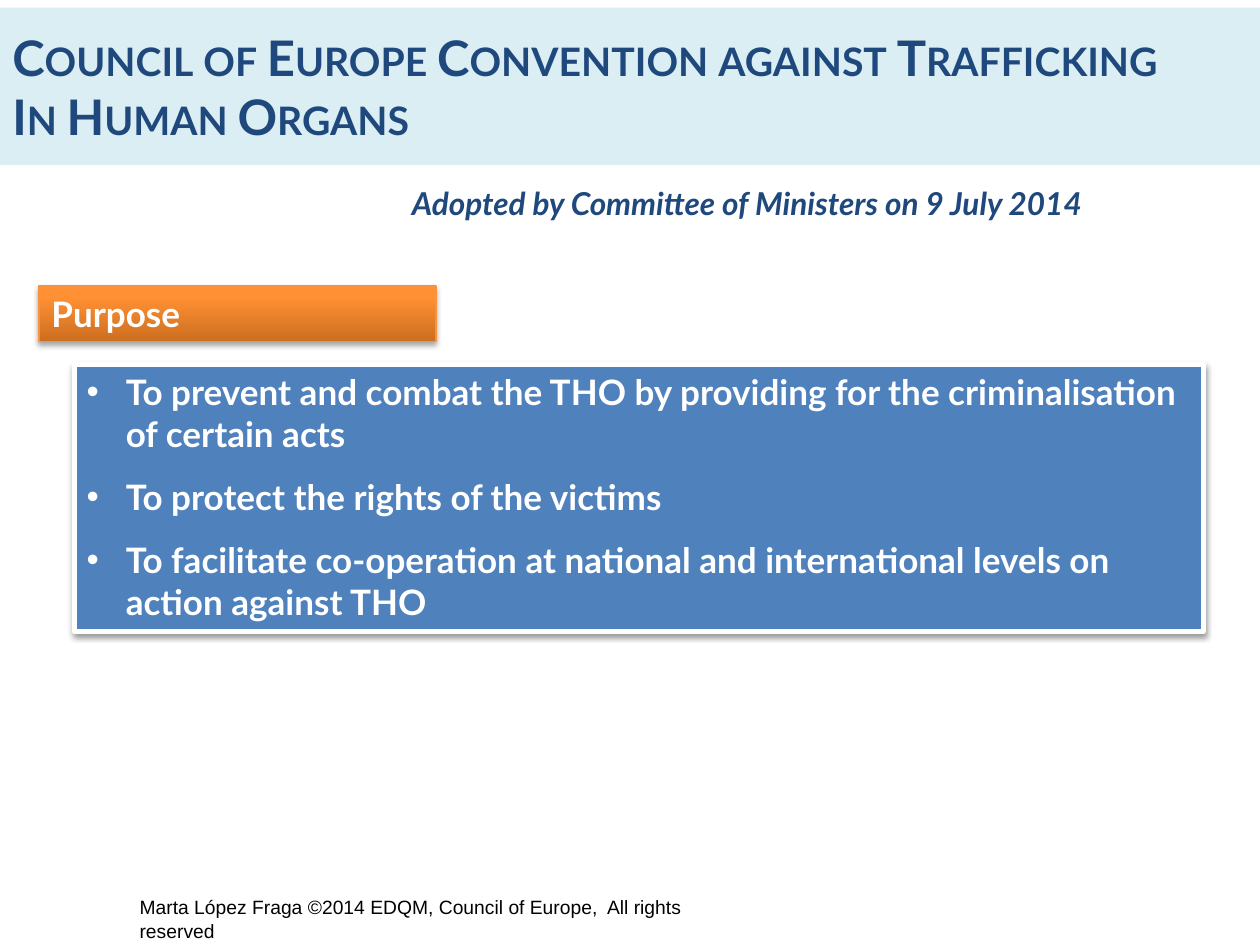
from copy import deepcopy

from lxml.etree import SubElement
from pptx import Presentation
from pptx.dml.color import RGBColor as Rgb
from pptx.enum.shapes import MSO_SHAPE as Shape
from pptx.enum.text import MSO_ANCHOR as Anchor, PP_ALIGN as Align
from pptx.oxml.ns import qn
from pptx.util import Inches, Pt

COLORS = {
    "band": "DBEEF4",
    "navy": "1F497D",
    "blue": "4F81BD",
    "white": "FFFFFF",
    "black": "000000",
    "orange_edge": "F69240",
}
ORANGE_STOPS = [(0, "CC6E20"), (0.8, "FF9034"), (1, "FF9136")]


def rgb(name):
    return Rgb.from_string(COLORS[name])


def write(shape, lines, size, color, font="Lato", bold=True, italic=False,
          small_caps=False, bullet=False, gap=0, anchor=Anchor.TOP):
    frame = shape.text_frame
    frame.word_wrap = True
    frame.vertical_anchor = anchor
    for index, line in enumerate(lines):
        paragraph = frame.add_paragraph() if index else frame.paragraphs[0]
        paragraph.alignment = Align.LEFT
        if index and gap:
            paragraph.space_before = Pt(gap)
        if bullet:
            props = paragraph._p.get_or_add_pPr()
            props.set("marL", str(Inches(0.31)))
            props.set("indent", str(-Inches(0.31)))
            SubElement(props, qn("a:buFont"), typeface="Arial")
            SubElement(props, qn("a:buChar"), char="•")
        run = paragraph.add_run()
        run.text = line
        run.font.name = font
        run.font.size = Pt(size)
        run.font.bold = bold
        run.font.italic = italic
        run.font.color.rgb = rgb(color)
        if small_caps:
            run.font._element.set("cap", "small")


class SlideBuilder:
    def __init__(self, slide):
        self.slide = slide

    def text(self, box, lines, **style):
        write(self.slide.shapes.add_textbox(*map(Inches, box)), lines, **style)

    def panel(self, box, lines, fill=None, stops=None, line=None,
              line_width=1, shadow=None, **style):
        """Filled rectangle; stops give a bottom-to-top gradient, shadow an opacity."""
        panel = self.slide.shapes.add_shape(Shape.RECTANGLE, *map(Inches, box))
        panel.shadow.inherit = False
        if stops:
            self.gradient(panel, stops)
        else:
            panel.fill.solid()
            panel.fill.fore_color.rgb = rgb(fill)
        if line:
            panel.line.color.rgb = rgb(line)
            panel.line.width = Pt(line_width)
        else:
            panel.line.fill.background()
        if shadow:
            self.drop_shadow(panel, shadow)
        write(panel, lines, **style)

    def gradient(self, panel, stops):
        panel.fill.gradient()
        panel.fill.gradient_angle = 90
        stop_list = panel._element.spPr.find(".//" + qn("a:gsLst"))
        while len(stop_list) < len(stops):
            stop_list.append(deepcopy(stop_list[-1]))
        for stop, (position, color) in zip(panel.fill.gradient_stops, stops):
            stop.position = position
            stop.color.rgb = Rgb.from_string(color)

    def drop_shadow(self, panel, opacity):
        effects = panel._element.spPr.find(qn("a:effectLst"))
        outer = SubElement(effects, qn("a:outerShdw"), blurRad=str(Pt(3.1)),
                           dist=str(Pt(1.7)), dir="5400000", rotWithShape="0")
        tint = SubElement(outer, qn("a:srgbClr"), val=COLORS["black"])
        SubElement(tint, qn("a:alpha"), val=str(opacity * 1000))


def main():
    deck = Presentation()
    deck.slide_width, deck.slide_height = Inches(10), Inches(7.5)
    builder = SlideBuilder(deck.slides.add_slide(deck.slide_layouts[6]))

    builder.panel((0, 0.06, 10, 1.25),
                  ["Council of Europe Convention against Trafficking",
                   "In Human Organs"],
                  fill="band", size=28, color="navy", small_caps=True,
                  anchor=Anchor.MIDDLE)
    builder.text((1.01, 7.06, 4.76, 0.47),
                 ["Marta López Fraga ©2014 EDQM, Council of Europe,  All rights reserved"],
                 size=11, color="black", font="Arial", bold=False)
    builder.panel((0.59, 2.89, 8.96, 2.12),
                  ["To prevent and combat the THO by providing for the "
                   "criminalisation of certain acts",
                   "To protect the rights of the victims",
                   "To facilitate co-operation at national and international "
                   "levels on action against THO"],
                  fill="blue", line="white", line_width=3, shadow=38,
                  size=20, color="white", bullet=True, gap=12)
    builder.panel((0.31, 2.27, 3.15, 0.44), ["Purpose"], stops=ORANGE_STOPS,
                  line="orange_edge", line_width=0.75, shadow=35,
                  size=20, color="white")
    builder.text((3.17, 1.41, 6.6, 0.4),
                 ["Adopted by Committee of Ministers on 9 July 2014"],
                 size=18, color="navy", italic=True)

    deck.save("out.pptx")


if __name__ == "__main__":
    main()
